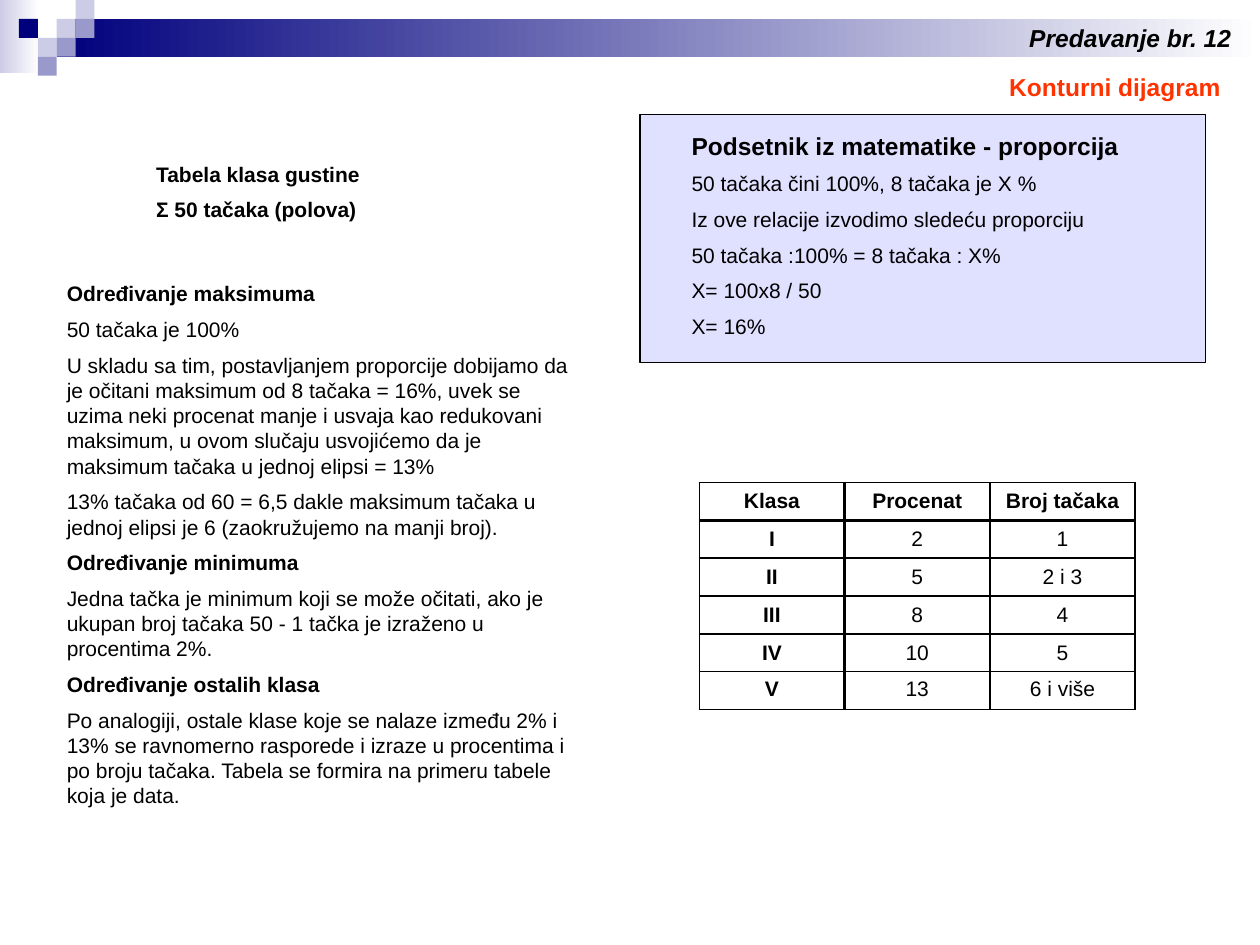
from dataclasses import dataclass
from lxml.etree import SubElement
from pptx import Presentation
from pptx.dml.color import RGBColor
from pptx.enum.shapes import MSO_SHAPE
from pptx.enum.text import MSO_ANCHOR, MSO_AUTO_SIZE, PP_ALIGN
from pptx.oxml.ns import qn
from pptx.util import Inches, Pt


@dataclass(frozen=True)
class Theme:
    font: str = "Arial"
    text: str = "000000"
    accent: str = "FF3300"
    navy: str = "00007D"
    violet: str = "9999CC"
    lavender: str = "CCCCE6"
    panel: str = "9999FF"
    white: str = "FFFFFF"
    heading: int = 14
    body: int = 12


theme = Theme()
deck = Presentation()
deck.slide_width, deck.slide_height = Inches(10), Inches(7.5)
COLUMN, ROW = deck.slide_width / 100, deck.slide_height / 75


def place(column, row, columns, rows):
    return (round(column * COLUMN), round(row * ROW),
            round(columns * COLUMN), round(rows * ROW))


def write(frame, lines, size=theme.body, color=theme.text, bold=(), italic=False,
          align=PP_ALIGN.LEFT, anchor=MSO_ANCHOR.TOP, wrap=True, first_size=None):
    frame.word_wrap = wrap
    frame.auto_size = MSO_AUTO_SIZE.NONE
    frame.vertical_anchor = anchor
    for index, line in enumerate(lines):
        para = frame.paragraphs[0] if index == 0 else frame.add_paragraph()
        para.alignment = align
        para.space_before = Pt(size / 2 if index else 0)
        properties = para._p.get_or_add_pPr()
        properties.set("marL", "0")
        properties.set("indent", "0")
        SubElement(properties, qn("a:buNone"))
        span = para.add_run()
        span.text = line
        span.font.name = theme.font
        span.font.size = Pt(first_size if first_size and index == 0 else size)
        span.font.bold = index in bold
        span.font.italic = italic
        span.font.color.rgb = RGBColor.from_string(color)


page = deck.slides.add_slide(deck.slide_layouts[1])

bands = [
    (theme.lavender, (0, 0, 3.1, 5.8)),
    (theme.navy, (4.5, 1.5, 95.5, 3)),
]
for color, area in bands:
    band = page.shapes.add_shape(MSO_SHAPE.RECTANGLE, *place(*area))
    band.shadow.inherit = False
    band.line.fill.background()
    band.fill.gradient()
    band.fill.gradient_angle = 0
    for stop, position, shade in zip(band.fill.gradient_stops, (0, 1), (color, theme.white)):
        stop.position = position
        stop.color.rgb = RGBColor.from_string(shade)

TILE = 1.5
mosaic = [
    (3, 1, theme.lavender), (4, 0, theme.lavender), (4, 1, theme.violet),
    (2, 2, theme.lavender), (1, 1, theme.navy), (3, 2, theme.violet),
    (2, 3, theme.violet),
]
for column, row, color in mosaic:
    tile = page.shapes.add_shape(
        MSO_SHAPE.RECTANGLE, *place(column * TILE, row * TILE, TILE, TILE))
    tile.shadow.inherit = False
    tile.line.fill.background()
    tile.fill.solid()
    tile.fill.fore_color.rgb = RGBColor.from_string(color)

title = page.shapes.title
title.left, title.top, title.width, title.height = place(79.1, 5.2, 19.7, 3.3)
write(title.text_frame, ["Konturni dijagram"], size=theme.heading,
      color=theme.accent, bold=(0,), wrap=False)

body = page.placeholders[1]
body.left, body.top, body.width, body.height = place(4.3, 21.8, 42.5, 50)
write(body.text_frame, [
    "Određivanje maksimuma",
    "50 tačaka je 100%",
    "U skladu sa tim, postavljanjem proporcije dobijamo da je očitani maksimum "
    "od 8 tačaka = 16%, uvek se uzima neki procenat manje i usvaja kao redukovani "
    "maksimum, u ovom slučaju usvojićemo da je maksimum tačaka u jednoj elipsi = 13%",
    "13% tačaka od 60 = 6,5 dakle maksimum tačaka u jednoj elipsi je 6 "
    "(zaokružujemo na manji broj).",
    "Određivanje minimuma",
    "Jedna tačka je minimum koji se može očitati, ako je ukupan broj tačaka "
    "50 - 1 tačka je izraženo u procentima 2%.",
    "Određivanje ostalih klasa",
    "Po analogiji, ostale klase koje se nalaze između 2% i 13% se ravnomerno "
    "rasporede i izraze u procentima i po broju tačaka. Tabela se formira na "
    "primeru tabele koja je data.",
], bold=(0, 4, 6))

caption = page.shapes.add_textbox(*place(11.4, 12.3, 18.9, 6))
write(caption.text_frame, ["Tabela klasa gustine", "Σ 50 tačaka (polova)"],
      bold=(0, 1), wrap=False)

panel = page.shapes.add_shape(MSO_SHAPE.RECTANGLE, *place(50.8, 9.1, 44.9, 19.7))
panel.shadow.inherit = False
panel.fill.solid()
panel.fill.fore_color.rgb = RGBColor.from_string(theme.panel)
panel_color = panel.fill._xPr.find(qn("a:solidFill"))[0]
SubElement(panel_color, qn("a:alpha"), val="30000")
panel.line.color.rgb = RGBColor.from_string(theme.text)
panel.line.width = Pt(0.75)

reminder = page.shapes.add_textbox(*place(53.9, 9.9, 43.3, 18.4))
write(reminder.text_frame, [
    "Podsetnik iz matematike - proporcija",
    "50 tačaka čini 100%, 8 tačaka je X %",
    "Iz ove relacije izvodimo sledeću proporciju",
    "50 tačaka :100% = 8 tačaka : X%",
    "X= 100x8 / 50",
    "X= 16%",
], bold=(0,), first_size=theme.heading)

classes = [
    ("Klasa", "Procenat", "Broj tačaka"),
    ("I", "2", "1"),
    ("II", "5", "2 i 3"),
    ("III", "8", "4"),
    ("IV", "10", "5"),
    ("V", "13", "6 i više"),
]
table = page.shapes.add_table(
    len(classes), len(classes[0]), *place(55.5, 38.3, 34.6, 18)).table
table.first_row = table.horz_banding = False
for row, values in enumerate(classes):
    for column, value in enumerate(values):
        cell = table.cell(row, column)
        borders = {
            "a:lnL": 2 if column == 1 else 1,
            "a:lnR": 2 if column == 0 else 1,
            "a:lnT": 2 if row == 1 else 1,
            "a:lnB": 2 if row == 0 else 1,
        }
        properties = cell._tc.get_or_add_tcPr()
        for side, width in borders.items():
            border = SubElement(properties, qn(side), w=str(Pt(width)))
            SubElement(SubElement(border, qn("a:solidFill")), qn("a:srgbClr"), val=theme.text)
        cell.fill.background()
        last = row == len(classes) - 1
        write(cell.text_frame, [value], bold=(0,) if row == 0 or column == 0 else (),
              align=PP_ALIGN.CENTER)
        cell.vertical_anchor = MSO_ANCHOR.TOP if last else MSO_ANCHOR.MIDDLE

lecture = page.shapes.add_textbox(*place(80.7, 1.3, 18.1, 3.3))
write(lecture.text_frame, ["Predavanje br. 12"], size=theme.heading,
      bold=(0,), italic=True, wrap=False)

deck.save("out.pptx")
